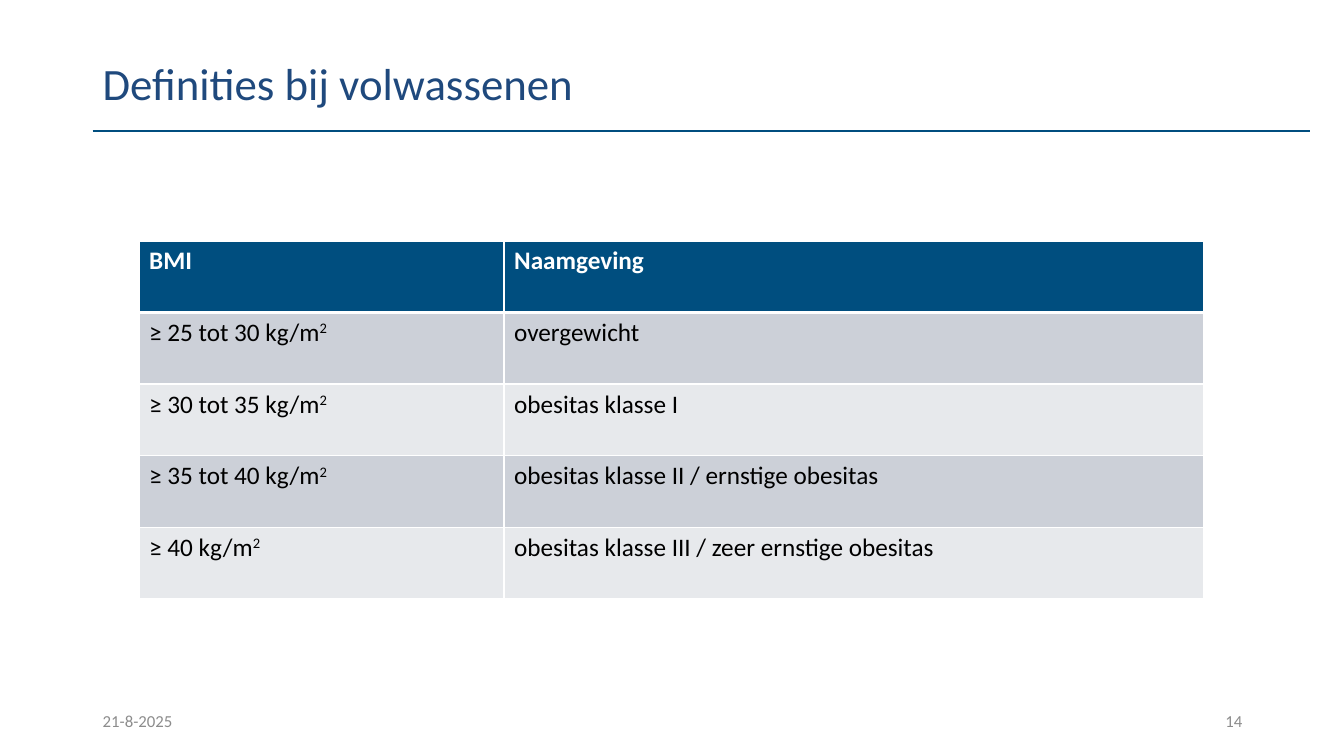
from lxml import etree
from pptx import Presentation
from pptx import util as u
from pptx.dml.color import RGBColor
from pptx.enum import shapes, text
from pptx.oxml.ns import qn

PX = 9144  # EMU in one px, 100 px to the inch
HUES = {"rule": "004E7F", "title": "1F497D", "foot": "8C8C8C", "ink": "000000",
        "white": "FFFFFF", "dark": "CCD0D8", "light": "E7E9EC"}


class Deck:
    def __init__(self, wide, high):
        self.prs = Presentation()
        self.prs.slide_width, self.prs.slide_height = wide * PX, high * PX
        self.slide = self.prs.slides.add_slide(self.prs.slide_layouts[6])
        self.face = "Calibri"

    def hue(self, name):
        return RGBColor.from_string(HUES[name])

    def style(self, para, size, hue, bold=False):
        for run in para.runs:
            run.font.name, run.font.size, run.font.bold = self.face, u.Pt(size), bold
            run.font.color.rgb = self.hue(hue)

    def rule(self, x, y, end):
        line = self.slide.shapes.add_connector(
            shapes.MSO_CONNECTOR.STRAIGHT, x * PX, y * PX, end * PX, y * PX)
        line.line.color.rgb = self.hue("rule")
        line.line.width = u.Pt(1.25)
        etree.SubElement(line._element.spPr, qn("a:effectLst"))

    def label(self, words, x, y, w, h, size, hue, align=text.PP_ALIGN.LEFT, lead=1.0):
        box = self.slide.shapes.add_textbox(x * PX, y * PX, w * PX, h * PX)
        frame = box.text_frame
        frame.text = words
        frame.word_wrap = True
        frame.vertical_anchor = text.MSO_ANCHOR.MIDDLE
        para = frame.paragraphs[0]
        para.alignment, para.line_spacing = align, lead
        self.style(para, size, hue)

    def edges(self, cell, widths):
        props = cell._tc.get_or_add_tcPr()
        for side, width in zip("LRTB", widths):
            edge = etree.SubElement(props, qn("a:ln" + side), w=str(u.Pt(width)))
            fill = etree.SubElement(edge, qn("a:solidFill"))
            etree.SubElement(fill, qn("a:srgbClr"), val=HUES["white"])

    def table(self, rows, x, y, cols, high):
        grid = self.slide.shapes.add_table(
            len(rows), len(cols), x * PX, y * PX, sum(cols) * PX, high * len(rows) * PX).table
        for col, wide in zip(grid.columns, cols):
            col.width = wide * PX
        for r, row in enumerate(rows):
            head = r == 0
            back = "rule" if head else ("light", "dark")[r % 2]
            for c, words in enumerate(row):
                cell = grid.cell(r, c)
                # The line under the header is thicker than the others
                self.edges(cell, (1, 1, 3 if r == 1 else 1, 3 if head else 1))
                cell.fill.solid()
                cell.fill.fore_color.rgb = self.hue(back)
                para = cell.text_frame.paragraphs[0]
                para.text = words
                if words.endswith("kg/m"):
                    power = para.add_run()
                    power.text = "2"
                    power._r.get_or_add_rPr().set("baseline", "30000")
                self.style(para, 18, "white" if head else "ink", head)


def main():
    deck = Deck(1333, 750)

    # Title and rule
    deck.rule(92, 130, 1299)
    deck.label("Definities bij volwassenen", 92, 40, 1150, 90, 32, "title", lead=0.9)

    # Footer
    deck.label("21-8-2025", 92, 695, 300, 40, 12, "foot")
    deck.label("14", 942, 695, 300, 40, 12, "foot", text.PP_ALIGN.RIGHT)

    # BMI classes
    rows = [("BMI", "Naamgeving"),
            ("≥ 25 tot 30 kg/m", "overgewicht"),
            ("≥ 30 tot 35 kg/m", "obesitas klasse I"),
            ("≥ 35 tot 40 kg/m", "obesitas klasse II / ernstige obesitas"),
            ("≥ 40 kg/m", "obesitas klasse III / zeer ernstige obesitas")]
    deck.table(rows, 138, 239, (362, 694), 71)

    deck.prs.save("out.pptx")


if __name__ == "__main__":
    main()
